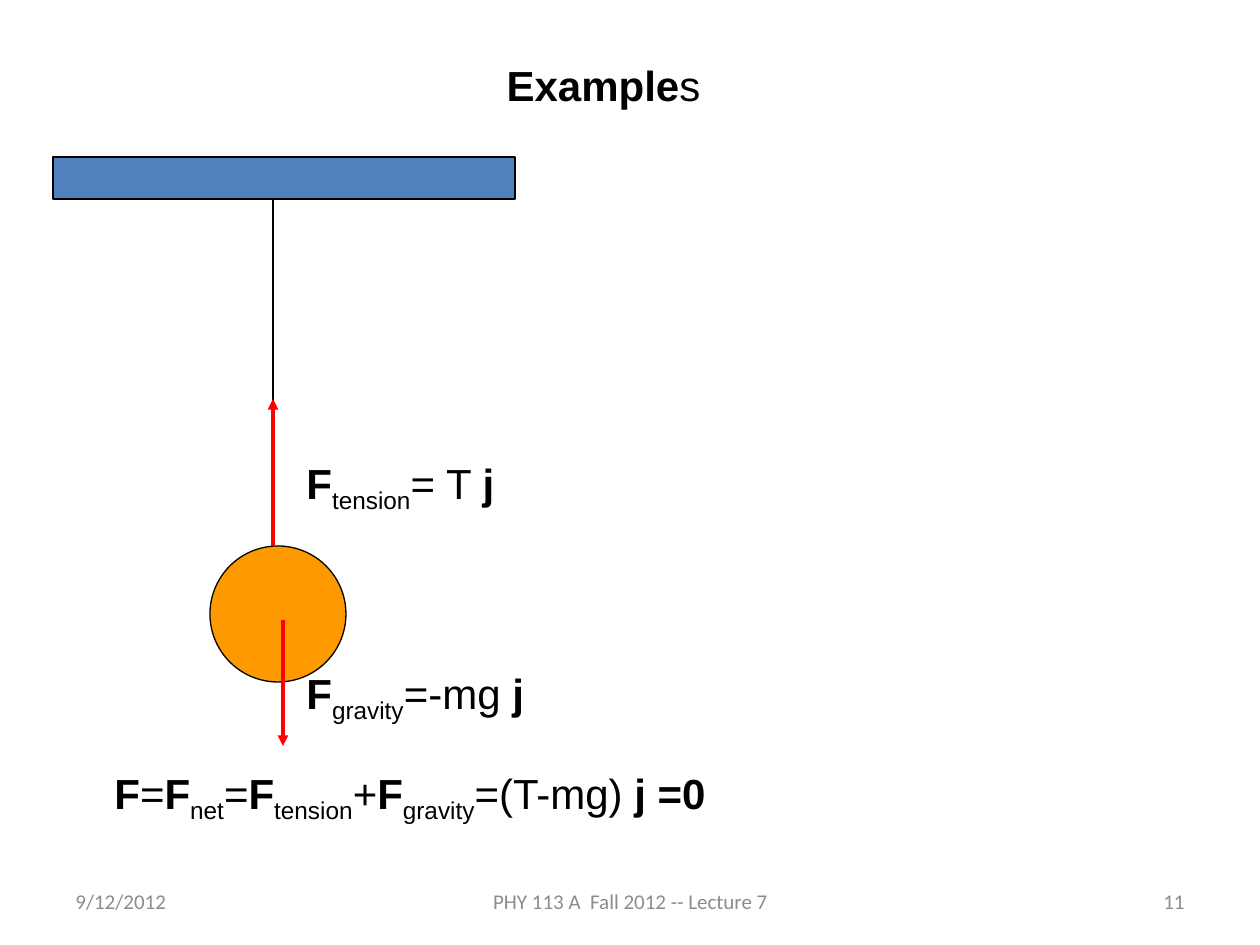
from pptx import Presentation
from pptx.dml.color import RGBColor
from pptx.enum.shapes import MSO_CONNECTOR as Link, MSO_SHAPE as Shape
from pptx.enum.text import MSO_ANCHOR as Anchor, MSO_AUTO_SIZE as AutoSize, PP_ALIGN as Align
from pptx.oxml.ns import qn
from pptx.util import Emu, Pt
from lxml.etree import SubElement

SCALE = 914400 / 126
COLORS = {"text": "000000", "footer": "8C8C8C", "beam": "4F81BD", "ball": "FF9900", "force": "FF0000"}


def px(*lengths):
    return [Emu(round(length * SCALE)) for length in lengths]


def color(name):
    return RGBColor.from_string(COLORS[name])


def force(name):
    return [("F", "bold"), (name, "sub")]


def write(box, spans, size=24, font="Arial", tint="text", align=Align.LEFT, anchor=Anchor.TOP):
    frame = box.text_frame
    frame.word_wrap = True
    frame.vertical_anchor = anchor
    frame.auto_size = AutoSize.NONE
    para = frame.paragraphs[0]
    para.alignment = align
    para.font.name = font
    para.font.size = Pt(size)
    para.font.color.rgb = color(tint)
    for text, style in spans:
        span = para.add_run()
        span.text = text
        span.font.bold = style == "bold"
        if style == "sub":
            span.font._element.set("baseline", "-25000")


def add_title(page, spans, left, top, width, height):
    title = page.shapes.title
    title.left, title.top, title.width, title.height = px(left, top, width, height)
    write(title, spans, align=Align.CENTER)


def add_text(page, spans, left, top, width, height, **style):
    write(page.shapes.add_textbox(*px(left, top, width, height)), spans, **style)


def add_footer(page, text, left, width, align):
    add_text(page, [(text, "plain")], left, 876, width, 50, size=12, font="Calibri",
             tint="footer", align=align, anchor=Anchor.MIDDLE)


def add_body(page, kind, fill, left, top, width, height):
    body = page.shapes.add_shape(kind, *px(left, top, width, height))
    body.shadow.inherit = False
    body.fill.solid()
    body.fill.fore_color.rgb = color(fill)
    body.line.color.rgb = color("text")
    body.line.width = Pt(0.75)


def add_vertical(page, x, start, end, tint="text", weight=0.75, arrow=False):
    line = page.shapes.add_connector(Link.STRAIGHT, *px(x, start, x, end))
    line.line.color.rgb = color(tint)
    line.line.width = Pt(weight)
    SubElement(line._element.spPr, qn("a:effectLst"))
    if arrow:
        SubElement(line.line._get_or_add_ln(), qn("a:tailEnd"), type="triangle")


def add_force(page, x, start, end):
    add_vertical(page, x, start, end, "force", 2, True)


def main():
    deck = Presentation()
    deck.slide_width, deck.slide_height = px(1260, 945)
    page = deck.slides.add_slide(deck.slide_layouts[5])

    add_footer(page, "9/12/2012", 63, 294, Align.LEFT)
    add_footer(page, "PHY 113 A  Fall 2012 -- Lecture 7", 431, 399, Align.CENTER)
    add_footer(page, "11", 903, 294, Align.RIGHT)
    add_title(page, [("Example", "bold"), ("s", "plain")], 73, 53, 1061, 63)

    add_vertical(page, 273, 546, 199)
    add_body(page, Shape.RECTANGLE, "beam", 53, 157, 462, 42)
    add_body(page, Shape.OVAL, "ball", 210, 546, 136, 136)
    add_force(page, 283, 620, 746)
    add_text(page, force("gravity") + [("=-mg ", "plain"), ("j", "bold")], 294, 661, 256, 63)
    add_force(page, 273, 546, 399)
    add_text(page, force("tension") + [("= T ", "plain"), ("j", "bold")], 294, 451, 246, 63)

    equals = [("=", "plain")]
    balance = ([("F", "bold")] + equals + force("net") + equals + force("tension")
               + [("+", "plain")] + force("gravity") + [("=(T-mg) ", "plain"), ("j =0", "bold")])
    add_text(page, balance, 102, 761, 864, 63)

    deck.save("out.pptx")


if __name__ == "__main__":
    main()
